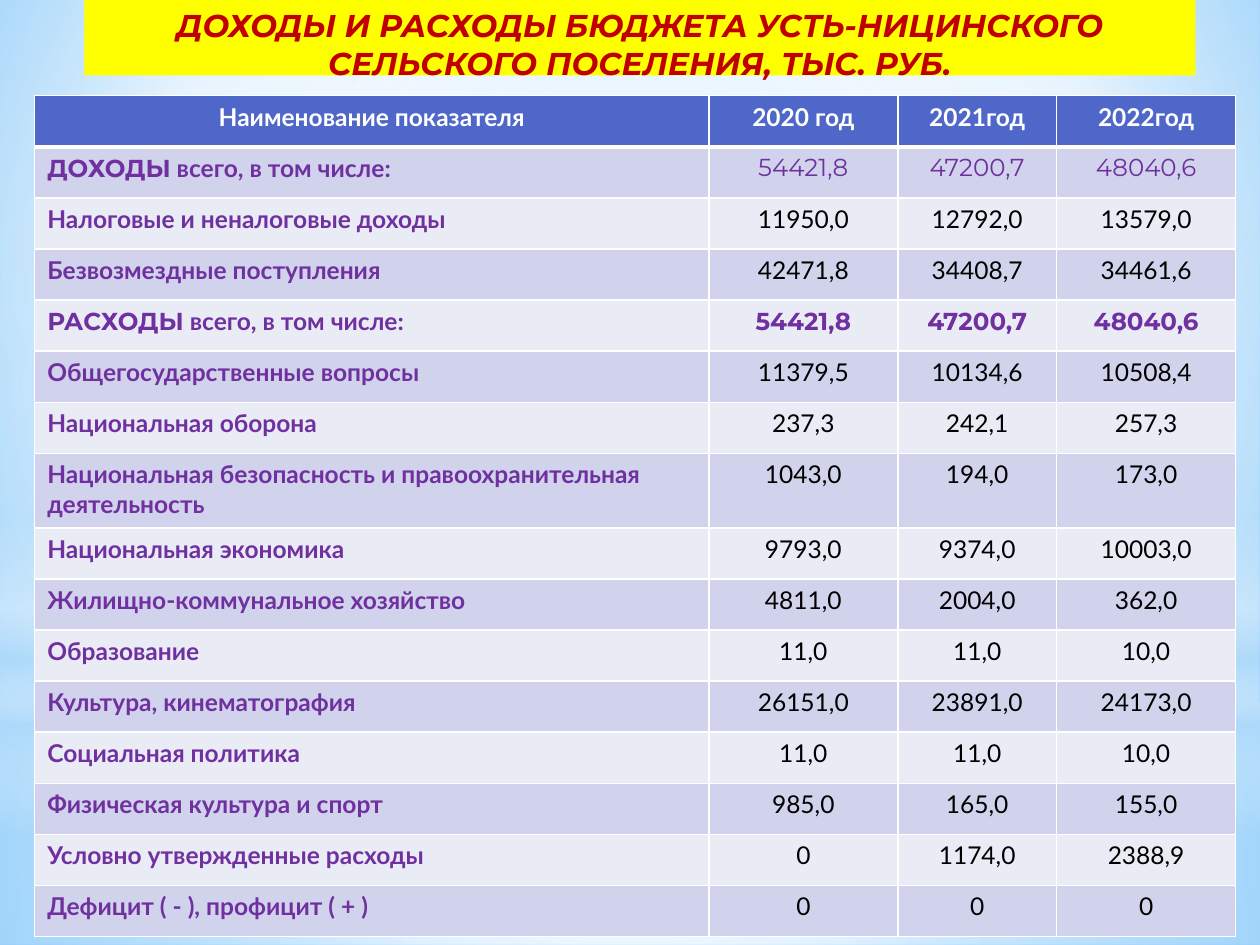
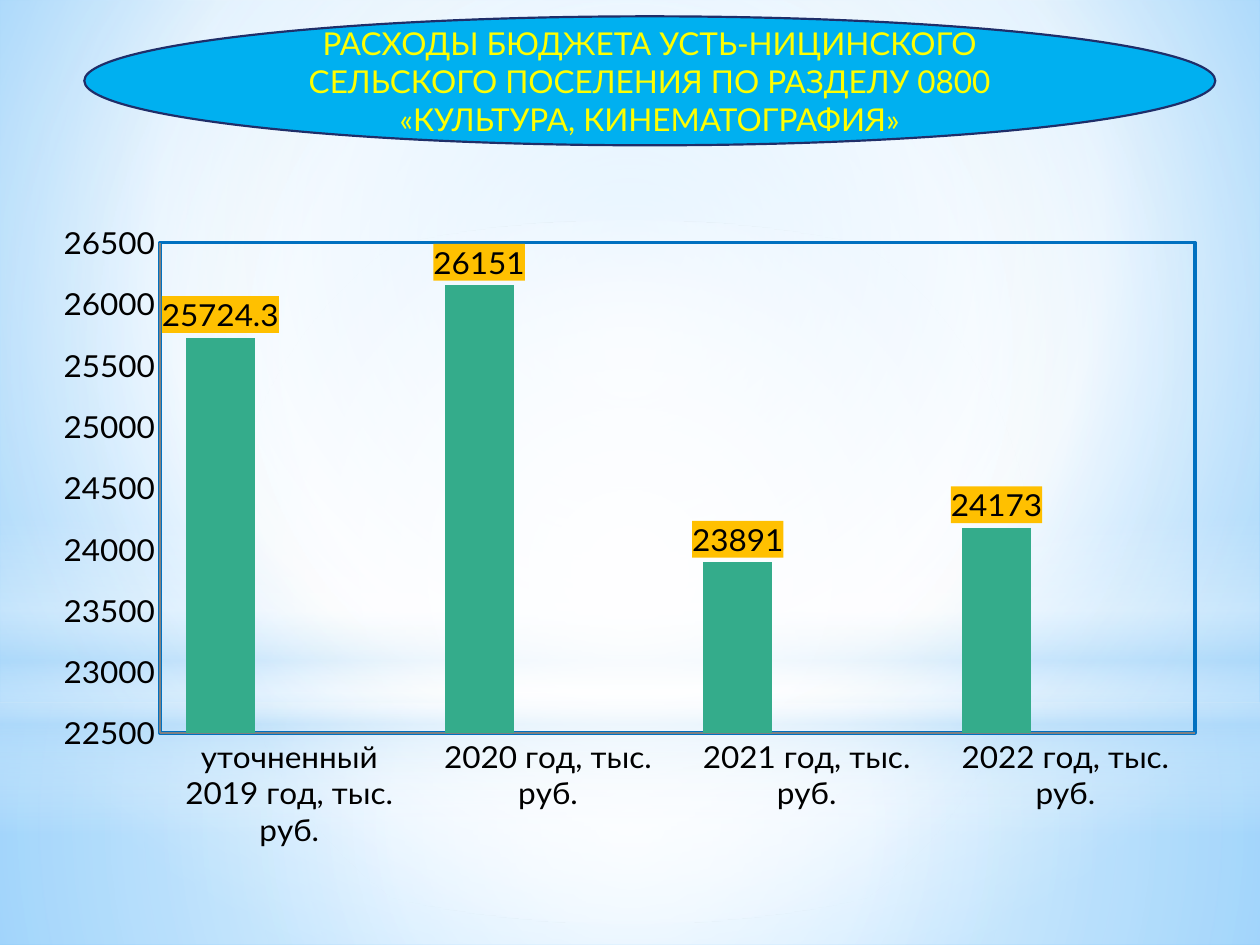
"""Build two slides on the revenue and spending of a rural budget."""
from lxml import etree
from pptx import Presentation, util as u
from pptx.chart import data as cd
from pptx.dml.color import RGBColor
from pptx.enum import chart as ce, shapes, text
from pptx.oxml import parse_xml
from pptx.oxml.ns import nsdecls, qn

HUES = {
    "white": "FFFFFF", "black": "000000", "pale": "B4DCFA", "sky": "9ED5FF",
    "blue": "5BB9FF", "yellow": "FFFF00", "red": "C00000", "head": "4E67C8",
    "odd": "D0D3EB", "even": "E9EBF5", "violet": "7030A0", "cyan": "00B0F0",
    "navy": "1F2E69", "green": "34AC8B", "aqua": "5ECCF3", "lime": "A7EA52",
    "gold": "FFC000", "frame": "0070C0", "grey": "808080",
}
RGB = {name: RGBColor.from_string(hue) for name, hue in HUES.items()}
MID = (50, 50, 50, 50)


def write(par, words, size=14, font="Lato", hue="black", bold=False,
          slant=False, side=text.PP_ALIGN.CENTER):
    par.alignment = side
    run = par.add_run()
    run.text = words
    run.font.size = u.Pt(size)
    run.font.name = font
    run.font.color.rgb = RGB[hue]
    run.font.bold = bold
    run.font.italic = slant


def blend(fill, root, stops, focus):
    fill.gradient()
    grad = root.find(".//" + qn("a:gradFill"))
    for kid in list(grad):
        grad.remove(kid)
    row = etree.SubElement(grad, qn("a:gsLst"))
    for pos, hue, alpha in stops:
        stop = etree.SubElement(row, qn("a:gs"), pos=str(pos * 1000))
        clr = etree.SubElement(stop, qn("a:srgbClr"), val=HUES[hue])
        if alpha < 100:
            etree.SubElement(clr, qn("a:alpha"), val=str(alpha * 1000))
    if focus:
        path = etree.SubElement(grad, qn("a:path"), path="circle")
        etree.SubElement(path, qn("a:fillToRect"),
                         {side: str(pct * 1000) for side, pct in zip("ltrb", focus)})
    else:
        etree.SubElement(grad, qn("a:lin"), ang="5400000", scaled="0")


prs = Presentation()
prs.slide_width, prs.slide_height = u.Cm(25.4), u.Cm(19.05)
BOX, OVAL = shapes.MSO_SHAPE.RECTANGLE, shapes.MSO_SHAPE.OVAL

BACK = [(0, "sky", 100), (60, "white", 100), (100, "blue", 100)]
GLOWS = [
    (BOX, 14.17, 4.88, [(0, "white", 91), (37, "white", 76), (100, "pale", 79)], MID),
    (BOX, 0, 14.17, [(0, "white", 89), (48, "white", 62), (100, "pale", 79)], MID),
    (BOX, 10.46, 6.35, [(0, "white", 0), (29, "white", 30), (45, "pale", 40),
                        (55, "white", 26), (65, "pale", 60), (100, "white", 0)], None),
    (OVAL, 4.45, 14.17, [(0, "white", 100), (56, "white", 0)], MID),
]
HEADS = [
    (BOX, (1.7, 0, 22.4, 1.52), "yellow", None, text.MSO_ANCHOR.TOP,
     "ДОХОДЫ И РАСХОДЫ БЮДЖЕТА УСТЬ-НИЦИНСКОГО СЕЛЬСКОГО ПОСЕЛЕНИЯ, ТЫС. РУБ.",
     dict(font="Montserrat", hue="red", bold=True, slant=True)),
    (OVAL, (1.7, 0.33, 22.8, 2.6), "cyan", "navy", text.MSO_ANCHOR.MIDDLE,
     "РАСХОДЫ БЮДЖЕТА УСТЬ-НИЦИНСКОГО СЕЛЬСКОГО ПОСЕЛЕНИЯ ПО РАЗДЕЛУ 0800 "
     "«КУЛЬТУРА, КИНЕМАТОГРАФИЯ»", dict(hue="yellow")),
]

for kind, place, hue, edge, anchor, words, look in HEADS:
    slide = prs.slides.add_slide(prs.slide_layouts[6])
    blend(slide.background.fill, slide.element, BACK, (20, 10, 20, 60))
    for form, top, high, stops, focus in GLOWS:
        glow = slide.shapes.add_shape(form, 0, u.Cm(top), prs.slide_width, u.Cm(high))
        glow.shadow.inherit = False
        glow.line.fill.background()
        blend(glow.fill, glow.element, stops, focus)
    head = slide.shapes.add_shape(kind, *map(u.Cm, place))
    head.shadow.inherit = False
    head.fill.solid()
    head.fill.fore_color.rgb = RGB[hue]
    if edge:
        head.line.color.rgb = RGB[edge]
        head.line.width = u.Pt(1.25)
    else:
        head.line.fill.background()
    head.text_frame.word_wrap = True
    head.text_frame.vertical_anchor = anchor
    write(head.text_frame.paragraphs[0], words, size=18, **look)

first, last = prs.slides

ROWS = [
    ("Наименование показателя", "2020 год", "2021год", "2022год"),
    ("ДОХОДЫ всего, в том числе:", "54421,8", "47200,7", "48040,6"),
    ("Налоговые и неналоговые доходы", "11950,0", "12792,0", "13579,0"),
    ("Безвозмездные поступления", "42471,8", "34408,7", "34461,6"),
    ("РАСХОДЫ всего, в том числе:", "54421,8", "47200,7", "48040,6"),
    ("Общегосударственные вопросы", "11379,5", "10134,6", "10508,4"),
    ("Национальная оборона", "237,3", "242,1", "257,3"),
    ("Национальная безопасность и правоохранительная деятельность",
     "1043,0", "194,0", "173,0"),
    ("Национальная экономика", "9793,0", "9374,0", "10003,0"),
    ("Жилищно-коммунальное хозяйство", "4811,0", "2004,0", "362,0"),
    ("Образование", "11,0", "11,0", "10,0"),
    ("Культура, кинематография", "26151,0", "23891,0", "24173,0"),
    ("Социальная политика", "11,0", "11,0", "10,0"),
    ("Физическая культура и спорт", "985,0", "165,0", "155,0"),
    ("Условно утвержденные расходы", "0", "1174,0", "2388,9"),
    ("Дефицит ( - ), профицит ( + )", "0", "0", "0"),
]
WIDE = (13.59, 3.81, 3.2, 3.61)
table = first.shapes.add_table(len(ROWS), len(WIDE), u.Cm(0.7), u.Cm(1.93),
                               u.Cm(sum(WIDE)), u.Cm(16.95)).table
for col, wide in zip(table.columns, WIDE):
    col.width = u.Cm(wide)

for r, row in enumerate(ROWS):
    table.rows[r].height = u.Cm(1.5 if len(row[0]) > 50 else 1.03)
    lead, gap, rest = row[0].partition(" ")
    total = lead.isupper()
    for c, words in enumerate(row):
        cell = table.cell(r, c)
        props = cell._tc.get_or_add_tcPr()
        for side in "LRTB":
            thick = (r, side) in ((0, "B"), (1, "T"))
            props.append(parse_xml(
                f'<a:ln{side} {nsdecls("a")} w="{u.Pt(3 if thick else 1)}"><a:solidFill>'
                f'<a:srgbClr val="{HUES["white"]}"/></a:solidFill></a:ln{side}>'))
        cell.fill.solid()
        cell.fill.fore_color.rgb = RGB["head" if r == 0 else "odd" if r % 2 else "even"]
        par = cell.text_frame.paragraphs[0]
        if r == 0:
            write(par, words, hue="white", bold=True)
        elif c == 0:
            look = dict(hue="violet", bold=True, side=text.PP_ALIGN.LEFT)
            if total:
                write(par, lead, font="Montserrat", **look)
                write(par, gap + rest, **look)
            else:
                write(par, words, **look)
        elif total:
            write(par, words, font="Montserrat", hue="violet", bold=lead == "РАСХОДЫ")
        else:
            write(par, words)

data = cd.CategoryChartData()
data.categories = ["уточненный 2019 год, тыс. руб."] + [
    f"{year} год, тыс. руб." for year in (2020, 2021, 2022)]
data.add_series("Series 1", (25724.3, 26151, 23891, 24173))
for n in (2, 3):
    data.add_series(f"Series {n}", (None,) * 4)
chart = last.shapes.add_chart(ce.XL_CHART_TYPE.COLUMN_CLUSTERED, u.Cm(0.7), u.Cm(4.52),
                              u.Cm(23.6), u.Cm(12.57), data).chart
chart.has_title = chart.has_legend = False
chart.font.size = u.Pt(18)
chart.font.name = "Lato"
chart.font.color.rgb = RGB["black"]

plot = chart.plots[0]
plot.gap_width, plot.overlap = 75, 0
plot.vary_by_categories = False
for bars, hue in zip(plot.series, ("green", "aqua", "lime")):
    bars.format.fill.solid()
    bars.format.fill.fore_color.rgb = RGB[hue]
    tags = bars.data_labels
    tags.show_value = True
    tags.position = ce.XL_LABEL_POSITION.OUTSIDE_END
    tags.font.size = u.Pt(18)
for tags in chart.element.iter(qn("c:dLbls")):
    tags.find(qn("c:txPr")).addprevious(parse_xml(
        f'<c:spPr {nsdecls("c", "a")}><a:solidFill><a:srgbClr val="{HUES["gold"]}"/>'
        '</a:solidFill></c:spPr>'))

for axis in (chart.category_axis, chart.value_axis):
    axis.has_major_gridlines = False
    axis.major_tick_mark = axis.minor_tick_mark = ce.XL_TICK_MARK.NONE
    axis.format.line.color.rgb = RGB["grey"]
    axis.format.line.width = u.Pt(0.75)
    axis.tick_labels.font.size = u.Pt(18)
chart.value_axis.minimum_scale = 22500
chart.value_axis.maximum_scale = 26500
chart.value_axis.major_unit = 500

area = chart.element.find(".//" + qn("c:plotArea"))
for old in area.findall(qn("c:layout")):
    area.remove(old)
spots = "".join(f'<c:{key} val="{val}"/>' for key, val in (
    ("layoutTarget", "inner"), ("xMode", "edge"), ("yMode", "edge"),
    ("x", 0.107), ("y", 0.029), ("w", 0.884), ("h", 0.816)))
area.insert(0, parse_xml(
    f'<c:layout {nsdecls("c")}><c:manualLayout>{spots}</c:manualLayout></c:layout>'))
area.append(parse_xml(
    f'<c:spPr {nsdecls("c", "a")}><a:noFill/><a:ln w="{u.Pt(2)}"><a:solidFill>'
    f'<a:srgbClr val="{HUES["frame"]}"/></a:solidFill></a:ln></c:spPr>'))

prs.save("out.pptx")
